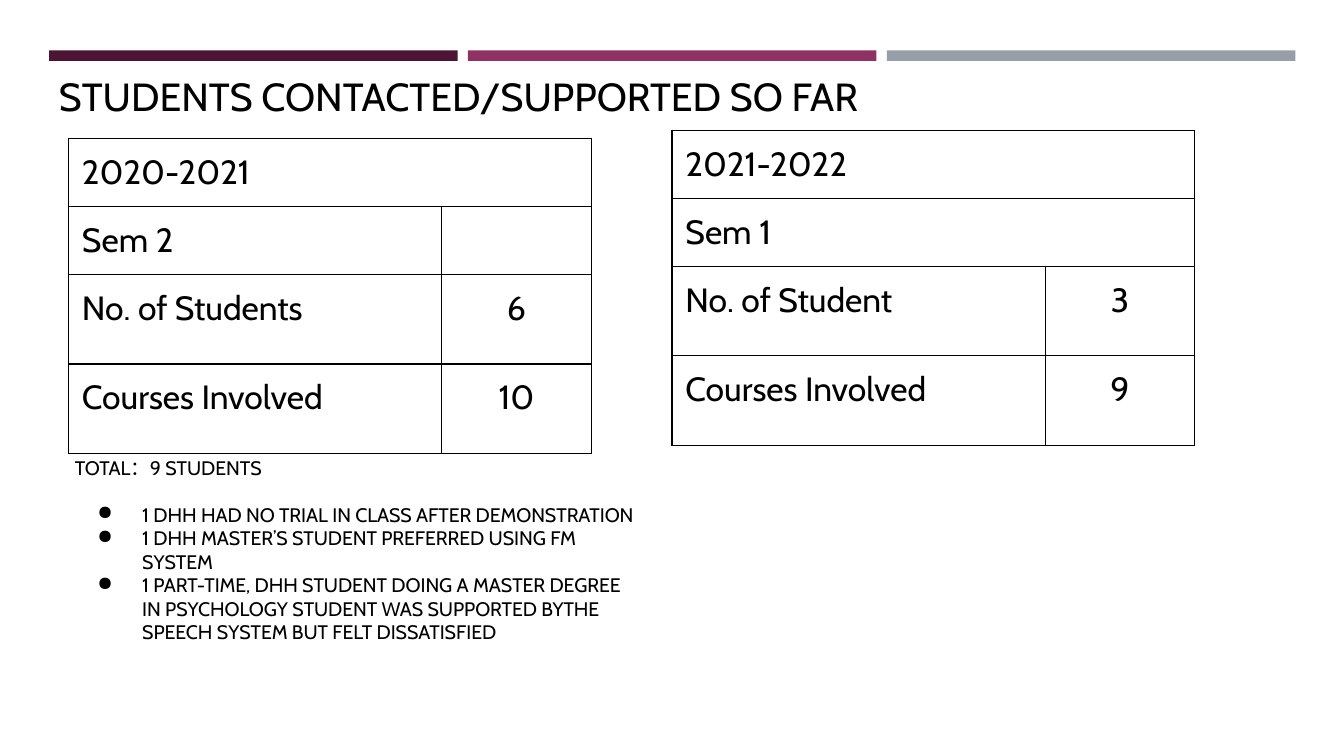
from lxml.etree import SubElement
from pptx import Presentation
from pptx.dml.color import RGBColor
from pptx.enum.shapes import MSO_SHAPE as Shape
from pptx.enum.text import MSO_ANCHOR as Anchor, PP_ALIGN as Align
from pptx.oxml import parse_xml
from pptx.oxml.ns import nsdecls, qn
from pptx.util import Pt

BLACK = RGBColor(0x00, 0x00, 0x00)
PLUM = RGBColor(0x4D, 0x14, 0x34)
MAGENTA = RGBColor(0x90, 0x31, 0x63)
GREY = RGBColor(0x96, 0x9F, 0xA7)
FONT = "Cabin"
INSET = Pt(7.2)

COLUMN_WIDTHS = (200, 80)
ROW_HEIGHTS = (31, 31, 48, 48)


def write(paragraph, text, size, align=Align.LEFT, bullet=None, space_after=0):
    paragraph.alignment = align
    paragraph.space_after = Pt(space_after)
    if bullet:
        properties = paragraph._p.get_or_add_pPr()
        properties.set("marL", str(Pt(36)))
        properties.set("indent", str(Pt(-24)))
        SubElement(properties, qn("a:buChar")).set("char", bullet)
    paragraph.font.size = Pt(size)
    if text:
        run = paragraph.add_run()
        run.text = text
        run.font.name = FONT
        run.font.size = Pt(size)
        run.font.color.rgb = BLACK


def add_bar(slide, left, color):
    bar = slide.shapes.add_shape(Shape.RECTANGLE, Pt(left), Pt(27), Pt(218.9), Pt(5.6))
    bar.shadow.inherit = False
    bar.fill.solid()
    bar.fill.fore_color.rgb = color
    bar.line.fill.background()


def add_text_frame(slide, left, top, width, height, anchor):
    box = slide.shapes.add_textbox(Pt(left), Pt(top), Pt(width), Pt(height))
    frame = box.text_frame
    frame.word_wrap = True
    frame.vertical_anchor = anchor
    frame.margin_left = frame.margin_right = INSET
    frame.margin_top = frame.margin_bottom = INSET
    return frame


def style_cell(cell):
    """Clear the fill, set the insets and rule all four sides in black."""
    cell.fill.background()
    cell.margin_left = cell.margin_right = INSET
    cell.margin_top = cell.margin_bottom = INSET
    properties = cell._tc.get_or_add_tcPr()
    for position, side in enumerate("LRTB"):
        properties.insert(position, parse_xml(
            f'<a:ln{side} {nsdecls("a")} w="{Pt(0.75)}"><a:solidFill>'
            f'<a:srgbClr val="{BLACK}"/></a:solidFill></a:ln{side}>'))


def add_year_table(slide, left, top, rows, heading_rows):
    """Draw one year's counts; the first heading_rows span both columns."""
    table = slide.shapes.add_table(
        len(rows), 2, Pt(left), Pt(top),
        Pt(sum(COLUMN_WIDTHS)), Pt(sum(ROW_HEIGHTS))).table
    table.first_row = table.horz_banding = False
    for column, width in zip(table.columns, COLUMN_WIDTHS):
        column.width = Pt(width)
    for r, (label, count) in enumerate(rows):
        table.rows[r].height = Pt(ROW_HEIGHTS[r])
        for c, (text, align) in enumerate(((label, Align.LEFT), (count, Align.CENTER))):
            cell = table.cell(r, c)
            style_cell(cell)
            write(cell.text_frame.paragraphs[0], text, 18, align=align)
        if r < heading_rows:
            table.cell(r, 0).merge(table.cell(r, 1))


def add_summary(slide):
    frame = add_text_frame(slide, 33.1, 236.9, 316.8, 157.7, Anchor.TOP)
    write(frame.paragraphs[0], "TOTAL：9 STUDENTS", 10.5, space_after=12.6)
    for remark in (
        "1 DHH HAD NO TRIAL IN CLASS AFTER DEMONSTRATION",
        "1 DHH MASTER’S STUDENT PREFERRED USING FM SYSTEM",
        "1 PART-TIME, DHH STUDENT DOING A MASTER DEGREE IN PSYCHOLOGY STUDENT "
        "WAS SUPPORTED BYTHE SPEECH SYSTEM BUT FELT DISSATISFIED",
    ):
        write(frame.add_paragraph(), remark, 10.5, bullet="●")


def main():
    presentation = Presentation()
    presentation.slide_width = Pt(720)
    presentation.slide_height = Pt(405)
    slide = presentation.slides.add_slide(presentation.slide_layouts[6])

    for index, color in enumerate((PLUM, MAGENTA, GREY)):
        add_bar(slide, 26.3 + 224.4 * index, color)

    add_year_table(slide, 360, 69.8, [
        ("2021-2022", ""), ("Sem 1", ""),
        ("No. of Student", "3"), ("Courses Involved", "9")], heading_rows=2)
    add_year_table(slide, 36.7, 74.2, [
        ("2020-2021", ""), ("Sem 2", ""),
        ("No. of Students", "6"), ("Courses Involved", "10")], heading_rows=1)

    title = add_text_frame(slide, 24.5, 28.8, 671, 45.4, Anchor.MIDDLE)
    write(title.paragraphs[0], "STUDENTS CONTACTED/SUPPORTED SO FAR", 21)
    add_summary(slide)

    presentation.save("out.pptx")


if __name__ == "__main__":
    main()
